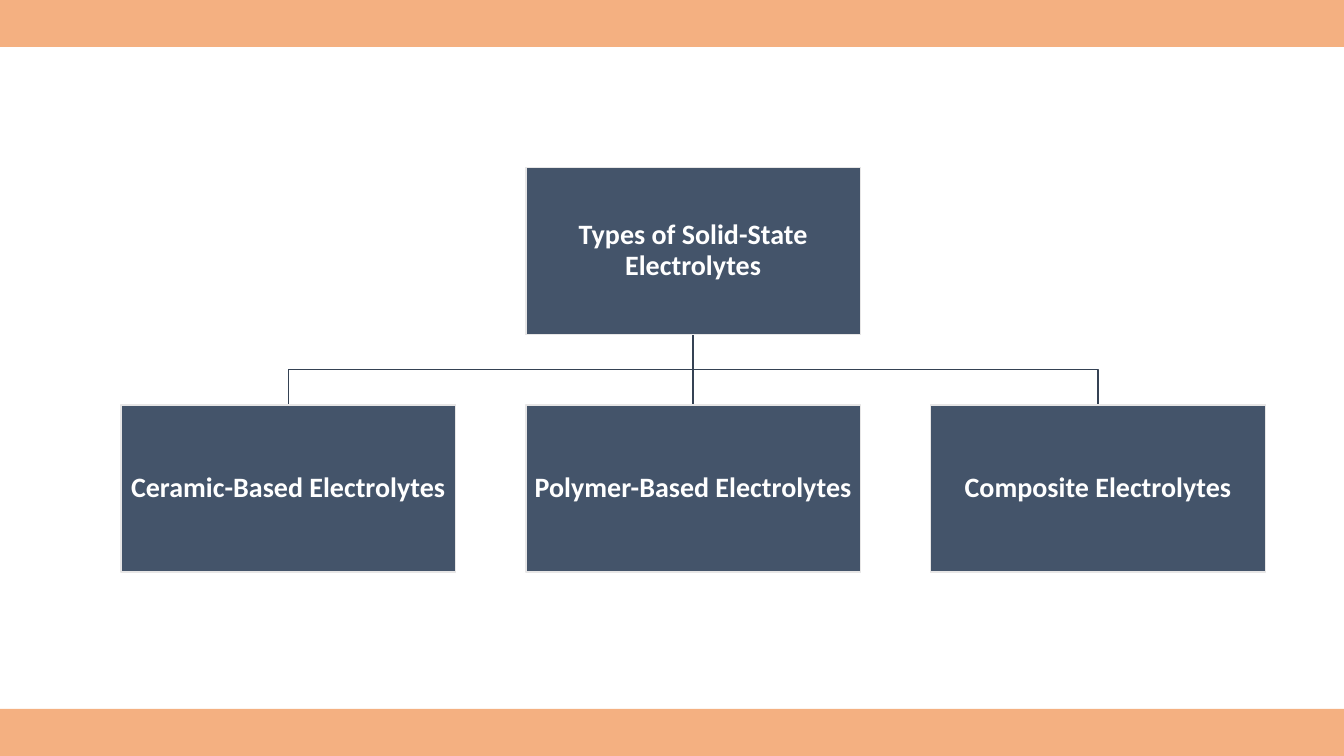
import pptx
import pptx.util
import pptx.dml.color
import pptx.enum.shapes
import pptx.enum.text
import lxml.etree

Pt = pptx.util.Pt
RECTANGLE = pptx.enum.shapes.MSO_SHAPE.RECTANGLE

# Content
ROOT = "Types of Solid-State Electrolytes"
BRANCHES = [
    "Ceramic-Based Electrolytes",
    "Polymer-Based Electrolytes",
    "Composite Electrolytes",
]
COLORS = {
    "band": "F4B081",
    "box": "44546A",
    "border": "E7E6E6",
    "link": "354254",
    "text": "FFFFFF",
}

# Layout in points
SLIDE_W, SLIDE_H = 960, 540
BAND_H = 33.6
BOX_W, BOX_H = 239, 119.5
GAP_X, GAP_Y = 50.2, 50.2
LEFT, ROOT_TOP = 86.4, 119.5
ROOT_BOTTOM = ROOT_TOP + BOX_H
BRANCH_TOP = ROOT_BOTTOM + GAP_Y
MIDDLE = LEFT + BOX_W + GAP_X


def color(name):
    return pptx.dml.color.RGBColor.from_string(COLORS[name])


def add_rectangle(slide, left, top, width, height, fill):
    shape = slide.shapes.add_shape(RECTANGLE, Pt(left), Pt(top), Pt(width), Pt(height))
    shape.shadow.inherit = False
    shape.fill.solid()
    shape.fill.fore_color.rgb = color(fill)
    shape.line.fill.background()
    return shape


def add_box(slide, left, top, text):
    box = add_rectangle(slide, left, top, BOX_W, BOX_H, "box")
    box.line.color.rgb = color("border")
    box.line.width = Pt(1)
    frame = box.text_frame
    frame.text = text
    frame.word_wrap = True
    frame.vertical_anchor = pptx.enum.text.MSO_ANCHOR.MIDDLE
    frame.margin_left = frame.margin_right = Pt(1)
    frame.margin_top = frame.margin_bottom = Pt(1)
    para = frame.paragraphs[0]
    para.alignment = pptx.enum.text.PP_ALIGN.CENTER
    para.line_spacing = 0.9
    font = para.runs[0].font
    font.name, font.size, font.bold = "Calibri", Pt(20), True
    font.color.rgb = color("text")


def add_link(slide, start_x, end_x):
    if start_x == end_x:
        link = slide.shapes.add_connector(
            pptx.enum.shapes.MSO_CONNECTOR.STRAIGHT,
            Pt(start_x), Pt(ROOT_BOTTOM), Pt(end_x), Pt(BRANCH_TOP))
        properties = link.element.spPr
        lxml.etree.SubElement(properties, pptx.oxml.ns.qn("a:effectLst"))
    else:
        bend = ROOT_BOTTOM + GAP_Y / 2
        corners = [(start_x, bend), (end_x, bend), (end_x, BRANCH_TOP)]
        builder = slide.shapes.build_freeform(Pt(start_x), Pt(ROOT_BOTTOM))
        builder.add_line_segments([(Pt(x), Pt(y)) for x, y in corners], close=False)
        link = builder.convert_to_shape()
        link.fill.background()
        link.shadow.inherit = False
    link.line.color.rgb = color("link")
    link.line.width = Pt(1)


deck = pptx.Presentation()
deck.slide_width, deck.slide_height = Pt(SLIDE_W), Pt(SLIDE_H)
slide = deck.slides.add_slide(deck.slide_layouts[6])

# Bands along the top and bottom edges
for top in (0, SLIDE_H - BAND_H):
    add_rectangle(slide, 0, top, SLIDE_W, BAND_H, "band")

# Links behind the boxes
branch_lefts = [LEFT + i * (BOX_W + GAP_X) for i in range(len(BRANCHES))]
for left in branch_lefts:
    add_link(slide, MIDDLE + BOX_W / 2, left + BOX_W / 2)

# Root and branch boxes
add_box(slide, MIDDLE, ROOT_TOP, ROOT)
for left, text in zip(branch_lefts, BRANCHES):
    add_box(slide, left, BRANCH_TOP, text)

deck.save("out.pptx")
